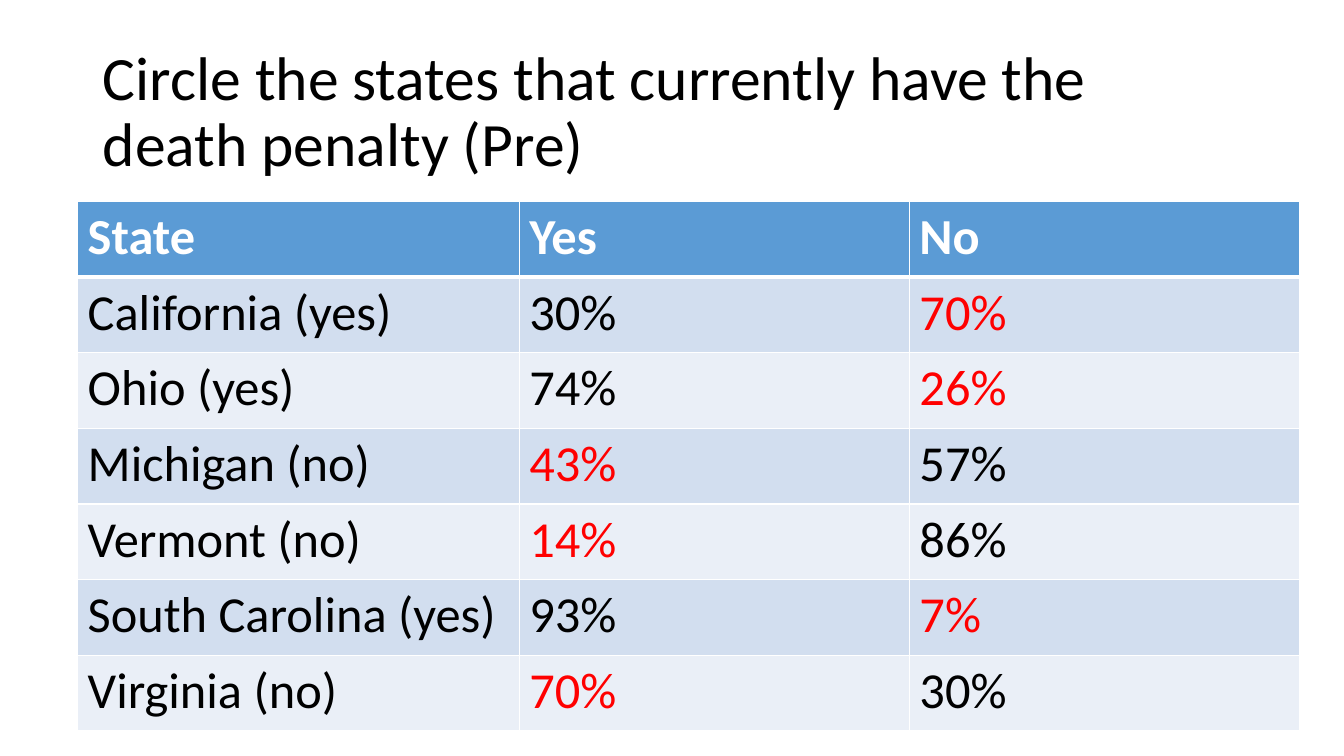
import dataclasses

import lxml.etree
import pptx
import pptx.dml.color
import pptx.enum.text
import pptx.oxml.ns
import pptx.util

Inches = pptx.util.Inches


@dataclasses.dataclass(frozen=True)
class Theme:
    font: str = "Calibri"
    title_size: int = 44
    table_size: int = 36
    text: str = "000000"
    wrong: str = "FF0000"
    header_text: str = "FFFFFF"
    header_fill: str = "5B9BD5"
    bands: tuple = ("D2DEEF", "EAEFF7")
    border: str = "FFFFFF"
    border_width: int = 1
    header_rule_width: int = 3


class SlideBuilder:
    def __init__(self, slide, theme):
        self.slide = slide
        self.theme = theme

    def add_run(self, paragraph, text, size, color, bold=False):
        run = paragraph.add_run()
        run.text = text
        run.font.name = self.theme.font
        run.font.size = pptx.util.Pt(size)
        run.font.bold = bold
        run.font.color.rgb = pptx.dml.color.RGBColor.from_string(color)

    def set_title(self, text, left, top, width, height):
        title = self.slide.shapes.title
        title.left, title.top = Inches(left), Inches(top)
        title.width, title.height = Inches(width), Inches(height)
        frame = title.text_frame
        frame.word_wrap = True
        frame.auto_size = pptx.enum.text.MSO_AUTO_SIZE.NONE
        frame.vertical_anchor = pptx.enum.text.MSO_ANCHOR.MIDDLE
        frame.margin_right = Inches(0.2)
        paragraph = frame.paragraphs[0]
        paragraph.alignment = pptx.enum.text.PP_ALIGN.LEFT
        paragraph.line_spacing = 0.9
        self.add_run(paragraph, text, self.theme.title_size, self.theme.text)

    def set_borders(self, cell, top, bottom):
        """Draw the four cell edges; top and bottom widths are in points."""
        properties = cell._tc.get_or_add_tcPr()
        side = self.theme.border_width
        edges = {"a:lnL": side, "a:lnR": side, "a:lnT": top, "a:lnB": bottom}
        qn = pptx.oxml.ns.qn
        for position, (tag, width) in enumerate(edges.items()):
            line = lxml.etree.Element(qn(tag), w=str(pptx.util.Pt(width)))
            fill = lxml.etree.SubElement(line, qn("a:solidFill"))
            lxml.etree.SubElement(fill, qn("a:srgbClr"), val=self.theme.border)
            properties.insert(position, line)

    def fill_cell(self, cell, text, fill, color, bold=False):
        cell.fill.solid()
        cell.fill.fore_color.rgb = pptx.dml.color.RGBColor.from_string(fill)
        paragraph = cell.text_frame.paragraphs[0]
        self.add_run(paragraph, text, self.theme.table_size, color, bold)

    def add_answer_table(self, header, answers, left, top, column_widths, row_height):
        """Add a table of (state, correct answer, yes %, no %), wrong answers in red."""
        theme = self.theme
        row_count = len(answers) + 1
        table = self.slide.shapes.add_table(
            row_count, len(header), Inches(left), Inches(top),
            Inches(sum(column_widths)), Inches(row_height * row_count)).table
        for column, width in zip(table.columns, column_widths):
            column.width = Inches(width)
        for row in table.rows:
            row.height = Inches(row_height)

        for column, text in enumerate(header):
            self.fill_cell(table.cell(0, column), text, theme.header_fill,
                           theme.header_text, bold=True)
        for row, (state, correct, yes, no) in enumerate(answers, start=1):
            fill = theme.bands[(row - 1) % 2]
            texts = (f"{state} ({correct})", f"{yes}%", f"{no}%")
            wrong_column = 2 if correct == "yes" else 1
            for column, text in enumerate(texts):
                color = theme.wrong if column == wrong_column else theme.text
                self.fill_cell(table.cell(row, column), text, fill, color)

        thin, thick = theme.border_width, theme.header_rule_width
        for row in range(row_count):
            for column in range(len(header)):
                self.set_borders(table.cell(row, column),
                                 top=thick if row == 1 else thin,
                                 bottom=thick if row == 0 else thin)


def main():
    presentation = pptx.Presentation()
    presentation.slide_width = Inches(13.33)
    presentation.slide_height = Inches(7.5)
    title_only = presentation.slide_layouts[5]
    builder = SlideBuilder(presentation.slides.add_slide(title_only), Theme())
    builder.set_title("Circle the states that currently have the death penalty (Pre)",
                      0.92, 0.4, 11.5, 1.45)
    answers = [
        ("California", "yes", 30, 70),
        ("Ohio", "yes", 74, 26),
        ("Michigan", "no", 43, 57),
        ("Vermont", "no", 14, 86),
        ("South Carolina", "yes", 93, 7),
        ("Virginia", "no", 70, 30),
    ]
    builder.add_answer_table(("State", "Yes", "No"), answers, left=0.77, top=2,
                             column_widths=(4.38, 3.87, 3.87), row_height=0.75)
    presentation.save("out.pptx")


if __name__ == "__main__":
    main()
